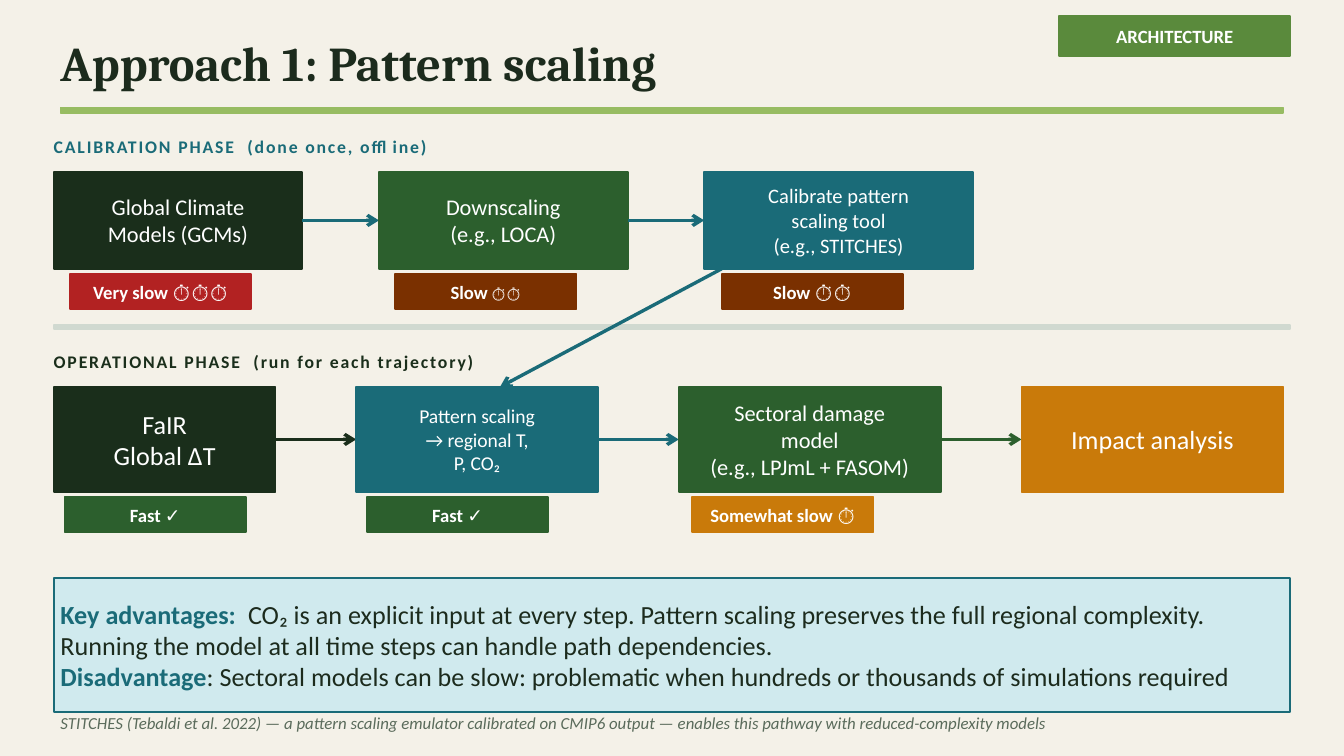
"""Build the pattern scaling architecture slide."""
import pptx
import pptx.util
import pptx.dml.color
import pptx.enum.shapes
import pptx.enum.text
import pptx.oxml.ns
import lxml.etree

Inches = pptx.util.Inches
Pt = pptx.util.Pt
rgb = pptx.dml.color.RGBColor.from_string
INK, FOREST, GREEN = "1C2B1D", "1A2E1B", "2C5F2D"
TEAL, AMBER, BROWN, RED = "1A6B78", "C97A0A", "7A3000", "B22222"


def write(text, at, shape=None, fill=None, edge=None, inset=0, center=False, **style):
    """Put text, a string or paragraphs of (text, style) runs, on the slide."""
    left, top, width, height = map(Inches, at)
    if shape is None and fill:
        rectangle = pptx.enum.shapes.MSO_SHAPE.RECTANGLE
        shape = slide.shapes.add_shape(rectangle, left, top, width, height)
        shape.shadow.inherit = False
        shape.fill.solid()
        shape.fill.fore_color.rgb = rgb(fill)
        shape.line.color.rgb = rgb(edge or fill)
        shape.line.width = Pt(1)
    elif shape is None:
        shape = slide.shapes.add_textbox(left, top, width, height)
    shape.left, shape.top, shape.width, shape.height = left, top, width, height
    if not text:
        return
    frame = shape.text_frame
    frame.word_wrap = True
    frame.auto_size = pptx.enum.text.MSO_AUTO_SIZE.NONE
    frame.vertical_anchor = pptx.enum.text.MSO_ANCHOR.MIDDLE
    frame.margin_left = frame.margin_right = Inches(inset)
    frame.margin_top = frame.margin_bottom = Inches(inset)
    align = pptx.enum.text.PP_ALIGN
    lines = [[(line, {})] for line in text.split("\n")] if isinstance(text, str) else text
    for index, runs in enumerate(lines):
        paragraph = frame.add_paragraph() if index else frame.paragraphs[0]
        paragraph.alignment = align.CENTER if center else align.LEFT
        for words, changes in runs:
            look = {"size": 10, "font": "Calibri", "color": "FFFFFF", **style, **changes}
            run = paragraph.add_run()
            run.text = words
            run.font.size = Pt(look["size"])
            run.font.name = look["font"]
            run.font.color.rgb = rgb(look["color"])
            run.font.bold = look.get("bold", False)
            run.font.italic = look.get("italic", False)
            if "spacing" in look:
                run.font._element.set("spc", str(look["spacing"] * 100))


def add_arrow(start, end, color):
    """Draw an arrow between two points."""
    straight = pptx.enum.shapes.MSO_CONNECTOR.STRAIGHT
    arrow = slide.shapes.add_connector(straight, *map(Inches, (*start, *end)))
    arrow.line.color.rgb = rgb(color)
    arrow.line.width = Pt(1.8)
    qn = pptx.oxml.ns.qn
    lxml.etree.SubElement(arrow.line._get_or_add_ln(), qn("a:tailEnd"), type="arrow")
    lxml.etree.SubElement(arrow._element.spPr, qn("a:effectLst"))


deck = pptx.Presentation()
deck.slide_width, deck.slide_height = Inches(10), Inches(10 * 9 / 16)
slide = deck.slides.add_slide(deck.slide_layouts[5])
slide.background.fill.solid()
slide.background.fill.fore_color.rgb = rgb("F4F1E8")

write("ARCHITECTURE", (7.88, 0.12, 1.72, 0.3), fill="5A8A3C", center=True, bold=True)
write("Approach 1: Pattern scaling", (0.45, 0.15, 9.1, 0.62), shape=slide.shapes.title,
      size=26, font="Cambria", color=INK, bold=True)
write("", (0.45, 0.8, 9.1, 0.04), fill="97BC62")
write("", (0.4, 2.42, 9.2, 0.03), fill="D0D9D0")

small_slow = [[("Slow", {}), (" ⏱⏱", {"size": 8})]]
calibration = [
    ("Global Climate\nModels (GCMs)", 0.4, 1.85, FOREST, 12, TEAL, "Very slow ⏱⏱⏱", 0.52, RED),
    ("Downscaling\n(e.g., LOCA)", 2.82, 1.85, GREEN, 12, TEAL, small_slow, 2.94, BROWN),
    ("Calibrate pattern\nscaling tool\n(e.g., STITCHES)", 5.24, 2, TEAL, 11, None,
     "Slow ⏱⏱", 5.37, BROWN),
]
operation = [
    ("FaIR\nGlobal ΔT", 0.4, 1.65, FOREST, 14, FOREST, "Fast ✓", 0.48, GREEN),
    ("Pattern scaling\n→ regional T,\nP, CO₂", 2.65, 1.8, TEAL, 10.5, TEAL, "Fast ✓", 2.73, GREEN),
    ("Sectoral damage\nmodel\n(e.g., LPJmL + FASOM)", 5.05, 1.95, GREEN, 12, GREEN,
     "Somewhat slow ⏱", 5.15, AMBER),
    ("Impact analysis", 7.6, 1.95, AMBER, 14, None, None, None, None),
]
phases = [
    ("CALIBRATION PHASE  (done once, offline)", TEAL, 1.28, 0.72, 0.57, calibration),
    ("OPERATIONAL PHASE  (run for each trajectory)", FOREST, 2.88, 0.78, 0.6, operation),
]
for heading, heading_color, top, height, gap, stages in phases:
    write(heading, (0.4, top - 0.33, 6, 0.28), size=9.5, color=heading_color, bold=True, spacing=1)
    for stage, left, width, fill, size, arrow_color, pace, pace_left, pace_fill in stages:
        write(stage, (left, top, width, height), fill=fill, inset=0.06, center=True, size=size)
        if pace:
            write(pace, (pace_left, top + height + 0.04, 1.35, 0.26), fill=pace_fill,
                  center=True, bold=True)
        if arrow_color:
            right, middle = left + width, top + height / 2
            add_arrow((right, middle), (right + gap, middle), arrow_color)

term = {"color": TEAL, "bold": True}
tradeoffs = [
    [("Key advantages:  ", term),
     ("CO₂ is an explicit input at every step. Pattern scaling preserves the full regional "
      "complexity. Running the model at all time steps can handle path dependencies.", {})],
    [("Disadvantage", term),
     (": Sectoral models can be slow: problematic when hundreds or thousands of simulations "
      "required", {})],
]
write(tradeoffs, (0.4, 4.3, 9.2, 1), fill="D0EAEE", edge=TEAL, inset=0.05, size=14, color=INK)
write("STITCHES (Tebaldi et al. 2022) — a pattern scaling emulator calibrated on CMIP6 output — "
      "enables this pathway with reduced-complexity models",
      (0.45, 5.22, 9.1, 0.32), size=9, color="5A6B5B", italic=True)
add_arrow((5.37, 2), (3.72, 2.88), TEAL)

deck.save("out.pptx")
